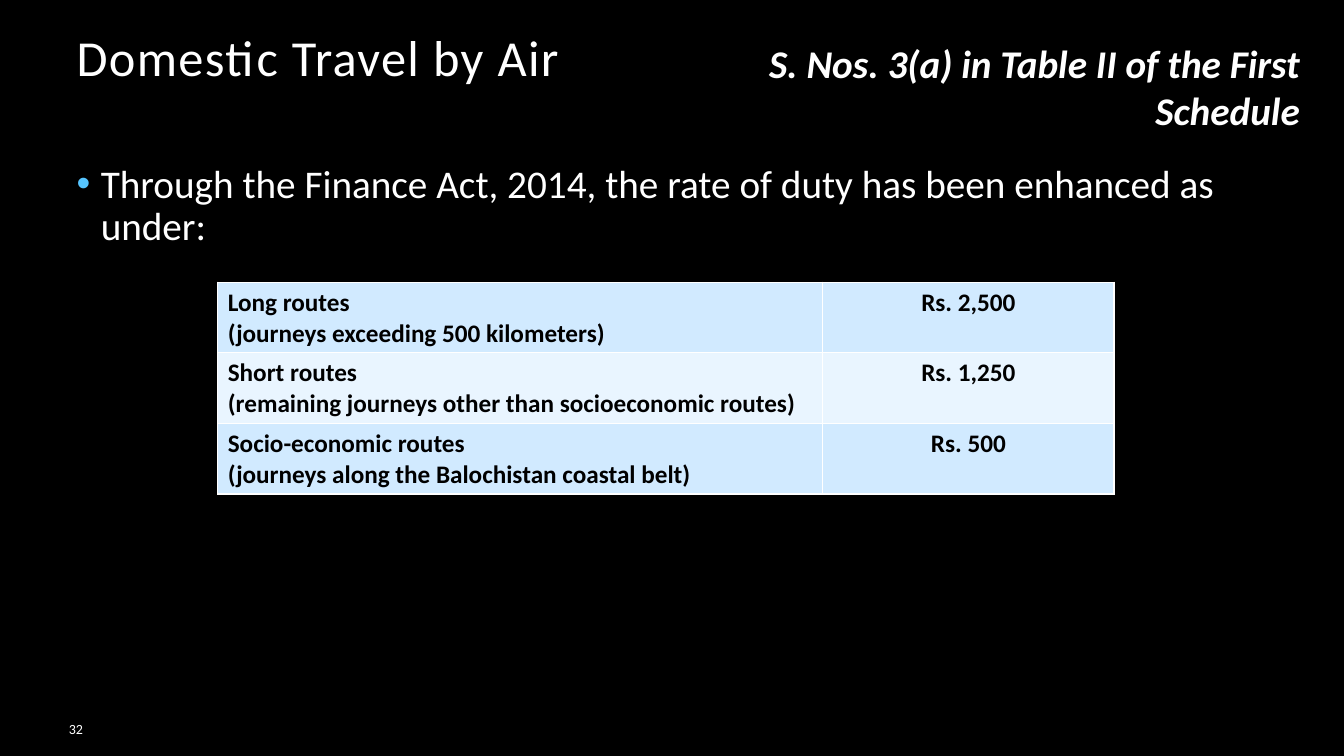
from pptx import Presentation
from pptx.dml.color import RGBColor
from pptx.enum.text import MSO_ANCHOR as Anchor, MSO_AUTO_SIZE as Fit, PP_ALIGN as Align
from pptx.oxml.ns import qn
from pptx.util import Inches, Pt
from lxml.etree import SubElement

BLACK = RGBColor(0x00, 0x00, 0x00)
WHITE = RGBColor(0xFF, 0xFF, 0xFF)
CYAN = RGBColor(0x56, 0xC5, 0xFF)
BANDS = [RGBColor(0xD1, 0xEA, 0xFF), RGBColor(0xE9, 0xF5, 0xFF)]

RATES = [
    (["Long routes", "(journeys exceeding 500 kilometers)"], "Rs. 2,500"),
    (["Short routes", "(remaining journeys other than socioeconomic routes)"], "Rs. 1,250"),
    (["Socio-economic routes", "(journeys along the Balochistan coastal belt)"], "Rs. 500"),
]


def solid(parent, color):
    fill = SubElement(parent, qn("a:solidFill"))
    SubElement(fill, qn("a:srgbClr"), val=str(color))


class Deck:
    font = "Calibri"

    def __init__(self):
        self.prs = Presentation()
        self.prs.slide_width, self.prs.slide_height = Inches(13.33), Inches(7.5)
        self.slide = self.prs.slides.add_slide(self.prs.slide_layouts[1])
        back = self.slide.background.fill
        back.solid()
        back.fore_color.rgb = BLACK

    def add_text(self, para, text, size, color=WHITE, bold=False, italic=False, align=Align.LEFT):
        para.alignment = align
        run = para.add_run()
        run.text = text
        font = run.font
        font.name, font.size = self.font, Pt(size)
        font.bold, font.italic = bold, italic
        font.color.rgb = color
        return run

    def place(self, shape, box, anchor):
        """Move a placeholder and return its first paragraph."""
        shape.left, shape.top, shape.width, shape.height = map(Inches, box)
        frame = shape.text_frame
        frame.word_wrap, frame.auto_size = True, Fit.NONE
        frame.vertical_anchor = anchor
        para = frame.paragraphs[0]
        para.line_spacing, para.space_before = 0.9, Pt(0)
        return para

    def title(self, text, box):
        para = self.place(self.slide.shapes.title, box, Anchor.BOTTOM)
        run = self.add_text(para, text, 36)
        run._r.get_or_add_rPr().set("spc", "100")

    def body(self, text, box):
        para = self.place(self.slide.placeholders[1], box, Anchor.TOP)
        props = para._p.get_or_add_pPr()
        props.set("marL", str(Inches(0.24)))
        props.set("indent", str(Inches(-0.24)))
        tint = SubElement(props, qn("a:buClr"))
        SubElement(tint, qn("a:srgbClr"), val=str(CYAN))
        SubElement(props, qn("a:buChar"), char="•")
        self.add_text(para, text, 28)

    def label(self, text, box, size, anchor=Anchor.TOP, **style):
        frame = self.slide.shapes.add_textbox(*map(Inches, box)).text_frame
        frame.word_wrap, frame.vertical_anchor = True, anchor
        self.add_text(frame.paragraphs[0], text, size, align=Align.RIGHT, **style)

    def cell(self, cell, lines, fill, align):
        props = cell._tc.get_or_add_tcPr()
        for side in ("lnL", "lnR", "lnT", "lnB"):
            solid(SubElement(props, qn(f"a:{side}"), w=str(Pt(1))), WHITE)
        cell.fill.solid()
        cell.fill.fore_color.rgb = fill
        frame = cell.text_frame
        for i, line in enumerate(lines):
            para = frame.add_paragraph() if i else frame.paragraphs[0]
            self.add_text(para, line, 18, BLACK, bold=True, align=align)

    def table(self, rows, left, top, widths, height):
        size = map(Inches, (left, top, sum(widths), height * len(rows)))
        table = self.slide.shapes.add_table(len(rows), len(widths), *size).table
        table.first_row = table.horz_banding = False
        for col, width in zip(table.columns, widths):
            col.width = Inches(width)
        for i, (route, rate) in enumerate(rows):
            band = BANDS[i % 2]
            self.cell(table.cell(i, 0), route, band, Align.LEFT)
            self.cell(table.cell(i, 1), [rate], band, Align.CENTER)


def main():
    deck = Deck()
    deck.title("Domestic Travel by Air", (0.66, -0.58, 10, 1.5))
    deck.label("32", (0, 7.08, 0.92, 0.3), 10, Anchor.MIDDLE)
    deck.body("Through the Finance Act, 2014, the rate of duty has been enhanced as under:",
              (0.66, 1.58, 12, 5.33))
    deck.label("S. Nos. 3(a) in Table II of the First Schedule",
               (6.33, 0.34, 6.66, 1.04), 28, bold=True, italic=True)
    deck.table(RATES, 2.16, 2.8, (6, 2.89), 0.7)
    deck.prs.save("out.pptx")


if __name__ == "__main__":
    main()
